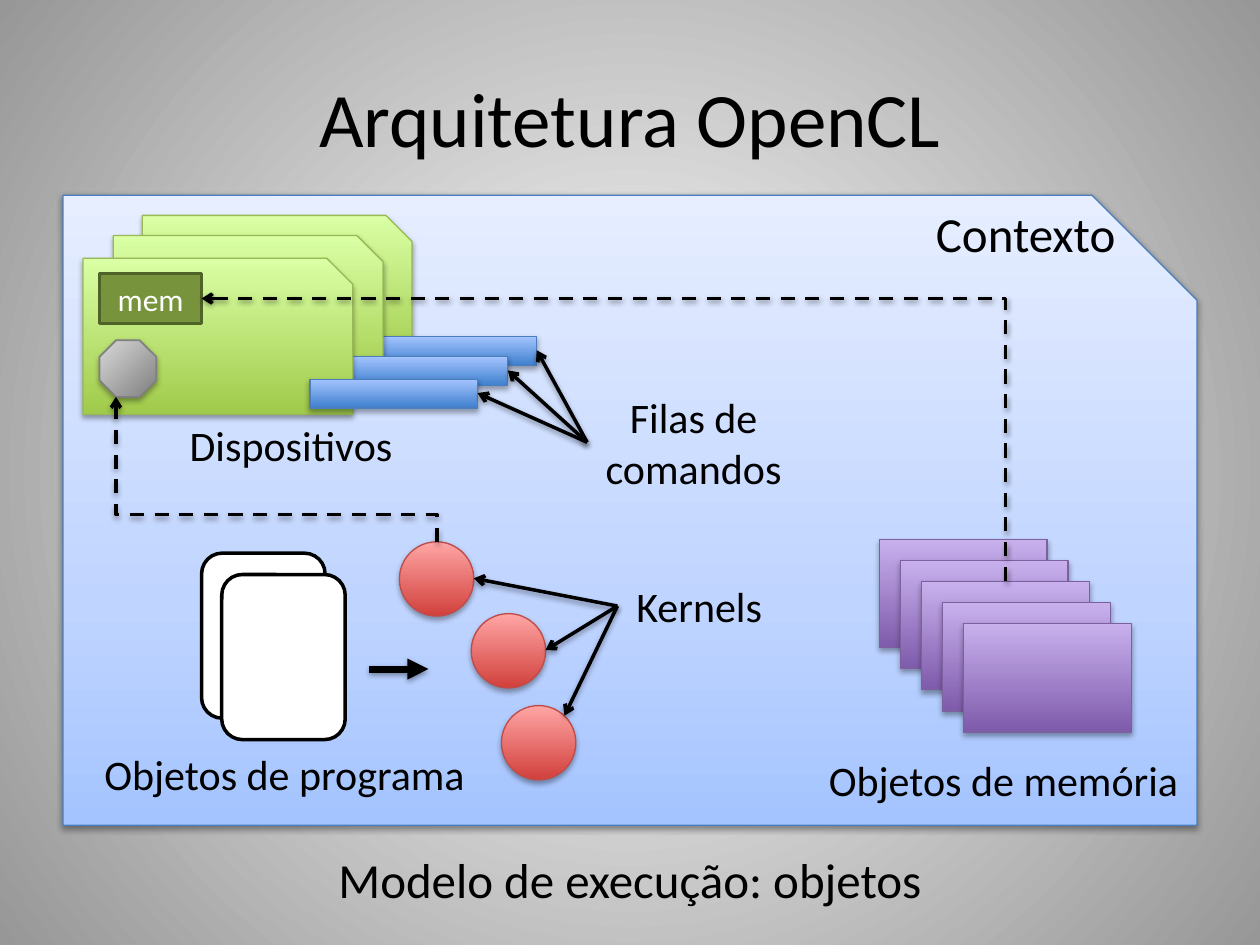
from lxml import etree
from pptx import Presentation
from pptx.dml.color import RGBColor
from pptx.enum.dml import MSO_LINE
from pptx.enum.shapes import MSO_CONNECTOR, MSO_SHAPE
from pptx.enum.text import MSO_ANCHOR, PP_ALIGN
from pptx.oxml.ns import qn
from pptx.util import Inches, Pt

SNIP, RECT = MSO_SHAPE.SNIP_1_RECTANGLE, MSO_SHAPE.RECTANGLE
ROUND, OVAL, OCT = MSO_SHAPE.ROUNDED_RECTANGLE, MSO_SHAPE.OVAL, MSO_SHAPE.OCTAGON
STRAIGHT, ELBOW = MSO_CONNECTOR.STRAIGHT, MSO_CONNECTOR.ELBOW
LEFT, MID = PP_ALIGN.LEFT, PP_ALIGN.CENTER
CENTER, TOP = MSO_ANCHOR.MIDDLE, MSO_ANCHOR.TOP
DASH = MSO_LINE.DASH

BLACK = RGBColor(0, 0, 0)
WHITE = RGBColor(255, 255, 255)
OLIVE = RGBColor(0x77, 0x93, 0x3C)
MOSS = RGBColor(0x4F, 0x62, 0x28)
BLUE = RGBColor(0x4B, 0x7E, 0xBC)
GREEN = RGBColor(0x98, 0xB9, 0x55)
PURPLE = RGBColor(0x7D, 0x60, 0xA0)
RED = RGBColor(0xBF, 0x4C, 0x48)
GREY = RGBColor(0x80, 0x80, 0x80)


def ramp(*stops):
    return [(pos, RGBColor.from_string(tint)) for pos, tint in stops]


BACK = ramp((0, "FFFFFF"), (100, "979797"))
SKY = ramp((0, "A4C4FF"), (35, "BFD4FF"), (100, "E6EEFF"))
LIME = ramp((0, "A0CA4A"), (100, "DAFFA5"))
AZURE = ramp((0, "3F80CE"), (100, "A4C4FF"))
LILAC = ramp((0, "7F5BAB"), (100, "C8B0ED"))
ROSE = ramp((0, "D1403C"), (100, "FFA6A5"))
STEEL = ramp((0, "808080"), (100, "D9D9D9"))

TITLE = "Arquitetura OpenCL"
LABELS = [
    ("Contexto", (7.33, 1.57, 1.67, 0.57), 28, LEFT, TOP),
    ("Dispositivos", (1.24, 3.28, 2.14, 0.5), 24, MID, CENTER),
    ("Objetos de programa", (0.73, 5.89, 4.02, 0.5), 24, LEFT, TOP),
    ("Objetos de memória", (6.48, 5.94, 3.17, 0.5), 24, LEFT, TOP),
    ("Filas de\ncomandos", (4.66, 3.06, 1.69, 0.91), 24, MID, TOP),
    ("Kernels", (4.9, 4.56, 1.3, 0.5), 24, MID, TOP),
    ("Modelo de execução: objetos", (0.5, 6.69, 9, 0.57), 28, MID, TOP),
]
DEVICES = [(1.13, 1.71), (0.9, 1.87), (0.66, 2.05)]
SHEETS = [(1.6, 4.39), (1.76, 4.56)]
KERNELS = [(3.17, 4.3), (3.74, 4.87), (3.98, 5.6)]
TIPS = [(3.76, 4.59), (4.33, 5.16), (4.48, 5.68)]
CARDS, CARD, STEP = 5, (6.98, 4.28), 0.67 / 4
QUEUE, HUB = (4.66, 3.51), (4.9, 4.81)


def add(parent, tag, **attrs):
    node = etree.SubElement(parent, qn(tag))
    for key, val in attrs.items():
        node.set(key, str(val))
    return node


def blend(props, stops, focus=None):
    old = props.find(qn("a:solidFill"))
    grad = etree.Element(qn("a:gradFill"), rotWithShape="1")
    row = add(grad, "a:gsLst")
    for pos, tint in stops:
        add(add(row, "a:gs", pos=pos * 1000), "a:srgbClr", val=tint)
    if focus:
        path = add(grad, "a:path", path="circle")
        add(path, "a:fillToRect", **{k: v * 1000 for k, v in zip("ltrb", focus)})
    else:
        add(grad, "a:lin", ang=270 * 60000, scaled=0)
    props.replace(old, grad)


def shade(effects, alpha, dist):
    cast = add(effects, "a:outerShdw", blurRad=Pt(3.15), dist=Pt(dist),
               dir=90 * 60000, rotWithShape=0)
    add(add(cast, "a:srgbClr", val=BLACK), "a:alpha", val=alpha * 1000)


def draw(kind, box, fill, edge, width=0.75, focus=None, alpha=35, dist=1.8):
    item = slide.shapes.add_shape(kind, *map(Inches, box))
    item.shadow.inherit = False
    item.fill.solid()
    item.line.color.rgb = edge
    item.line.width = Pt(width)
    if isinstance(fill, list):
        props = item.element.spPr
        blend(props, fill, focus)
        shade(props.find(qn("a:effectLst")), alpha, dist)
    else:
        item.fill.fore_color.rgb = fill
    return item


def write(frame, text, size, align, anchor, tint=BLACK):
    frame.text = text
    frame.word_wrap = True
    frame.vertical_anchor = anchor
    for para in frame.paragraphs:
        para.alignment = align
        for run in para.runs:
            run.font.name = "Calibri"
            run.font.size = Pt(size)
            run.font.color.rgb = tint


def link(start, end, kind=STRAIGHT, width=2, head="arrow"):
    wire = slide.shapes.add_connector(kind, *map(Inches, start + end))
    wire.line.color.rgb = BLACK
    wire.line.width = Pt(width)
    if kind == ELBOW:
        wire.line.dash_style = DASH
    props = wire.element.spPr
    add(props.find(qn("a:ln")), "a:tailEnd", type=head)
    shade(add(props, "a:effectLst"), 38, 1.57)
    return wire


def bend(start, end, preset, adj=None):
    wire = link(start, end, ELBOW)
    (x1, y1), (x2, y2) = start, end
    wide, high = abs(y2 - y1), abs(x2 - x1)
    wire.left = Inches((x1 + x2 - wide) / 2)
    wire.top = Inches((y1 + y2 - high) / 2)
    wire.width, wire.height = Inches(wide), Inches(high)
    props = wire.element.spPr
    frame = props.find(qn("a:xfrm"))
    frame.attrib.pop("flipH", None)
    frame.set("rot", str(270 * 60000))
    frame.set("flipV", "1")
    geom = props.find(qn("a:prstGeom"))
    geom.set("prst", preset)
    if adj:
        add(geom.find(qn("a:avLst")), "a:gd", name="adj1", fmla=f"val {adj}")


deck = Presentation()
deck.slide_width, deck.slide_height = Inches(10), Inches(7.5)
slide = deck.slides.add_slide(deck.slide_layouts[5])
slide.background.fill.solid()
blend(slide.element.find(".//" + qn("p:bgPr")), BACK, (50, 50, 50, 50))

title = slide.shapes.title
title.left, title.top, title.width, title.height = map(Inches, (0.5, 0.3, 9, 1.25))
write(title.text_frame, TITLE, 44, MID, CENTER)

draw(SNIP, (0.5, 1.55, 9, 5), SKY, BLUE, alpha=38, dist=1.57)
for x, y in DEVICES:
    draw(SNIP, (x, y, 2.14, 1.24), LIME, GREEN)
    draw(RECT, (x + 1.8, y + 0.96, 1.33, 0.23), AZURE, BLUE)
for x, y in SHEETS:
    draw(ROUND, (x, y, 0.98, 1.31), WHITE, BLACK, 2)
for i in range(CARDS):
    draw(RECT, (CARD[0] + i * STEP, CARD[1] + i * STEP, 1.33, 0.86), LILAC, PURPLE)
for x, y in KERNELS:
    draw(OVAL, (x, y, 0.59, 0.59), ROSE, RED)
chip = draw(RECT, (0.79, 2.17, 0.81, 0.4), OLIVE, MOSS, 2)
write(chip.text_frame, "mem", 18, MID, CENTER, WHITE)
draw(OCT, (0.79, 2.7, 0.45, 0.45), STEEL, GREY, 1, (100, 100, 0, 0))

for text, box, size, align, anchor in LABELS:
    label = slide.shapes.add_textbox(*map(Inches, box))
    write(label.text_frame, text, size, align, anchor)

for x, y in DEVICES:
    link(QUEUE, (x + 3.13, y + 1.07))
for tip in TIPS:
    link(HUB, tip)
link((2.93, 5.31), (3.4, 5.31), width=4, head="triangle")
bend((7.98, 4.61), (1.6, 2.37), "bentConnector2")
bend((3.47, 4.3), (0.92, 3.15), "bentConnector3", 18800)

deck.save("out.pptx")
